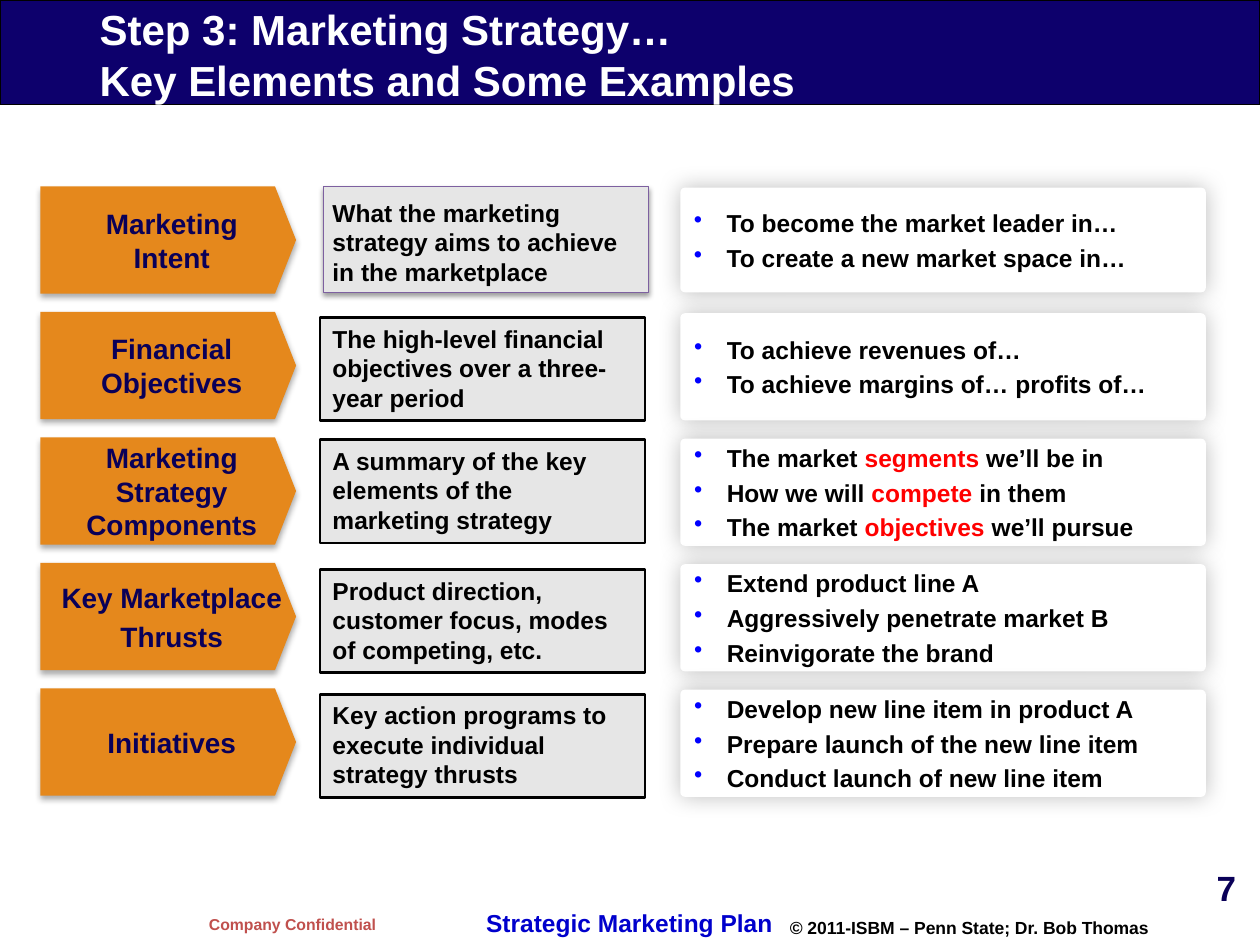
from lxml import etree
from pptx import Presentation
from pptx.dml.color import RGBColor
from pptx.enum import shapes, text
from pptx.oxml.ns import qn
from pptx.util import Inches, Pt

NAVY = RGBColor(0x0D, 0x00, 0x6C)
INK = RGBColor(0x0A, 0x00, 0x58)
BLACK = RGBColor(0, 0, 0)
WHITE = RGBColor(0xFF, 0xFF, 0xFF)
GREY = RGBColor(0xE6, 0xE6, 0xE6)
ORANGE = RGBColor(0xE5, 0x88, 0x1C)
PURPLE = RGBColor(0x7D, 0x60, 0xA0)
RED = RGBColor(0xFF, 0, 0)
BRICK = RGBColor(0xC0, 0x50, 0x4D)
BLUE = RGBColor(0, 0, 0xCC)
DOT = RGBColor(0, 0, 0xFF)
SHAPE = shapes.MSO_SHAPE
ALIGN = text.PP_ALIGN
MID = text.MSO_ANCHOR.MIDDLE
GROW = text.MSO_AUTO_SIZE.SHAPE_TO_FIT_TEXT
INSET = (0.1, 0.05, 0.1, 0.05)

ROWS = [
    (["Marketing\nIntent"],
     "What the marketing strategy aims to achieve in the marketplace",
     [["To become the market leader in…"],
      ["To create a new market space in…"]]),
    (["Financial Objectives"],
     "The high-level financial objectives over a three-year period",
     [["To achieve revenues of…"],
      ["To achieve margins of… profits of…"]]),
    (["Marketing\nStrategy Components"],
     "A summary of the key elements of the marketing strategy",
     [["The market ", "segments ", "we’ll be in"],
      ["How we will", " compete ", "in them"],
      ["The market ", "objectives ", "we’ll pursue"]]),
    (["Key Marketplace", "Thrusts"],
     "Product direction, customer focus, modes of competing, etc.",
     [["Extend product line A"],
      ["Aggressively penetrate market B"],
      ["Reinvigorate the brand"]]),
    (["Initiatives"],
     "Key action programs to execute individual strategy thrusts",
     [["Develop new line item in product A"],
      ["Prepare launch of the new line item"],
      ["Conduct launch of new line item"]]),
]
TOPS = [1.52, 2.52, 3.49, 4.52, 5.51]


def place(box):
    """Turn a box in inches into lengths."""
    return [Inches(n) for n in box]


def write(para, words, size, color):
    """Add a bold run, with a line break at each newline."""
    for i, line in enumerate(words.split("\n")):
        if i:
            para.add_line_break()
        run = para.add_run()
        run.text = line
        font = run.font
        font.name, font.size, font.bold = "Arial", Pt(size), True
        font.color.rgb = color


def frame(shape, inset=INSET, anchor=text.MSO_ANCHOR.TOP, wrap=True):
    """Set up and return the text frame of a shape."""
    tf = shape.text_frame
    tf.word_wrap, tf.vertical_anchor = wrap, anchor
    (tf.margin_left, tf.margin_top,
     tf.margin_right, tf.margin_bottom) = place(inset)
    return tf


def paras(tf, count):
    """Return the given number of paragraphs in a frame."""
    return [tf.paragraphs[0]] + [tf.add_paragraph() for _ in range(count - 1)]


def indent(para, left, first=0):
    """Set the left margin and first-line indent of a paragraph."""
    props = para._p.get_or_add_pPr()
    props.set("marL", str(Inches(left)))
    props.set("indent", str(Inches(first)))
    return props


def cast(shape, alpha, blur, dist, angle):
    """Give a shape a soft black shadow."""
    glow = shape._element.spPr.find(qn("a:effectLst"))
    drop = etree.SubElement(
        glow, qn("a:outerShdw"), blurRad=str(Pt(blur)), dist=str(Pt(dist)),
        dir=str(angle * 60000), algn="ctr", rotWithShape="0")
    tint = etree.SubElement(drop, qn("a:srgbClr"), val=str(BLACK))
    etree.SubElement(tint, qn("a:alpha"), val=str(alpha * 1000))


def block(slide, kind, box, fill, line=None, width=0.75):
    """Add a filled shape, outlined when a line colour is given."""
    shape = slide.shapes.add_shape(kind, *place(box))
    shape.shadow.inherit = False
    shape.fill.solid()
    shape.fill.fore_color.rgb = fill
    if line is None:
        shape.line.fill.background()
    else:
        shape.line.color.rgb = line
        shape.line.width = Pt(width)
    return shape


def label(slide, box, words, size, color, wrap=True, align=ALIGN.LEFT, fit=GROW):
    """Add a one-paragraph text box."""
    tf = frame(slide.shapes.add_textbox(*place(box)), wrap=wrap)
    tf.auto_size = fit
    tf.paragraphs[0].alignment = align
    write(tf.paragraphs[0], words, size, color)


def header(slide, box):
    """Draw the band and set the title over it."""
    band = block(slide, SHAPE.RECTANGLE, box, NAVY, BLACK)
    title = slide.shapes.title
    title._element.addprevious(band._element)
    title.left, title.top, title.width, title.height = place(
        (0.67, -0.14, 8.61, 1.14))
    tf = frame(title, (0, 0.05, 0.1, 0.05), MID)
    tf.auto_size = text.MSO_AUTO_SIZE.NONE
    para = tf.paragraphs[0]
    para.alignment = ALIGN.LEFT
    indent(para, 0.12)
    write(para, "Step 3: Marketing Strategy…\nKey Elements and Some Examples",
          24, WHITE)


def step(slide, box, lines):
    """Draw an orange pentagon naming a step."""
    shape = block(slide, SHAPE.PENTAGON, box, ORANGE)
    shape.adjustments[0] = 0.196
    cast(shape, 32, 3.5, 2.2, 90)
    tf = frame(shape, (0.03, 0.02, 0.02, 0.02), MID)
    for para, line in zip(paras(tf, len(lines)), lines):
        para.alignment, para.space_after = ALIGN.CENTER, Pt(3)
        indent(para, 0.13)
        write(para, line, 16, INK)


def brief(slide, box, words):
    """Draw a grey outlined box that explains a step."""
    shape = block(slide, SHAPE.RECTANGLE, box, GREY, BLACK, 1.5)
    tf = frame(shape)
    tf.auto_size = GROW
    tf.paragraphs[0].alignment = ALIGN.LEFT
    write(tf.paragraphs[0], words, 14, BLACK)


def card(slide, box, items):
    """Draw a white card of bullets, with the middle run in red."""
    shape = block(slide, SHAPE.ROUNDED_RECTANGLE, box, WHITE)
    shape.adjustments[0] = 0.042
    cast(shape, 25, 13, 0, 0)
    tf = frame(shape, (0.1, 0.05, 0.02, 0.05), MID)
    for i, (para, runs) in enumerate(zip(paras(tf, len(items)), items)):
        para.level, para.alignment = 2, ALIGN.LEFT
        para.space_before = Pt(3 if i else 0)
        props = indent(para, 0.26, -0.26)
        tint = etree.SubElement(props, qn("a:buClr"))
        etree.SubElement(tint, qn("a:srgbClr"), val=str(DOT))
        etree.SubElement(props, qn("a:buChar"), char="•")
        for j, words in enumerate(runs):
            write(para, words, 14, RED if j == 1 else BLACK)


def footer(slide, top):
    """Set the footer line and the page number above it."""
    label(slide, (1.56, top + 0.05, 1.53, 0.25), "Company Confidential",
          9, BRICK, False)
    label(slide, (3.76, top, 2.49, 0.34), "Strategic Marketing Plan",
          14, BLUE, False)
    label(slide, (6.17, top + 0.07, 3.42, 0.27),
          "© 2011-ISBM – Penn State; Dr. Bob Thomas", 10, BLACK)
    label(slide, (9.08, top - 0.33, 0.83, 0.33), "7", 20, INK,
          align=ALIGN.RIGHT, fit=text.MSO_AUTO_SIZE.NONE)


def main():
    """Build the slide and save it."""
    deck = Presentation()
    deck.slide_width, deck.slide_height = Inches(10), Inches(7.5)
    slide = deck.slides.add_slide(deck.slide_layouts[5])
    header(slide, (0, 0, 10, 0.83))
    for i, (name, words, items) in enumerate(ROWS):
        top = 1.49 + i * 0.996
        step(slide, (0.32, top - 0.01, 2.03, 0.85), name)
        card(slide, (5.4, top, 4.17, 0.85 if i else 0.83), items)
        if i:
            brief(slide, (2.54, TOPS[i], 2.58, 0.82), words)
        else:
            panel = block(slide, SHAPE.RECTANGLE, (2.57, 1.48, 2.58, 0.84),
                          GREY, PURPLE)
            cast(panel, 38, 3.1, 1.6, 90)
            label(slide, (2.54, TOPS[i], 2.58, 0.8), words, 14, BLACK)
    footer(slide, 7.16)
    deck.save("out.pptx")


if __name__ == "__main__":
    main()
